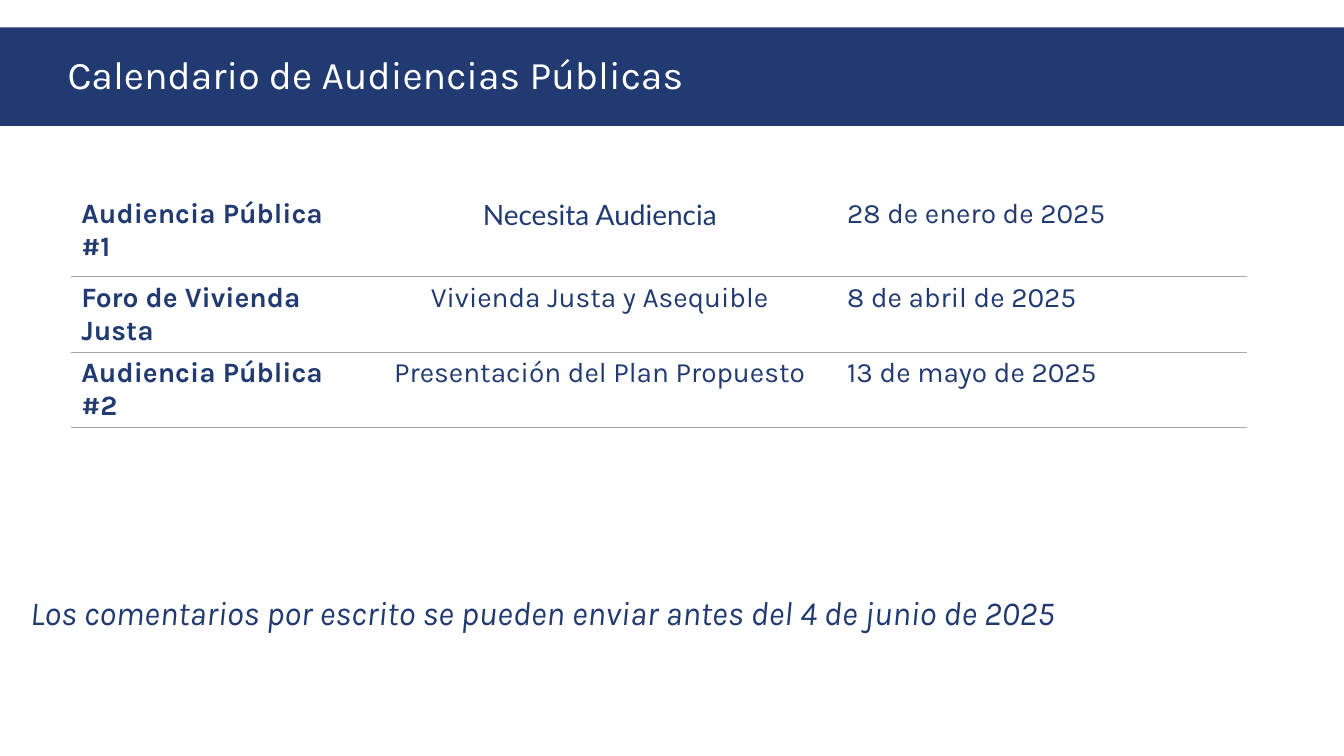
import pptx
import pptx.util
import pptx.dml.color
import pptx.enum.text
import pptx.oxml
import pptx.oxml.ns

Pt = pptx.util.Pt
ALIGN = pptx.enum.text.PP_ALIGN
ANCHOR = pptx.enum.text.MSO_ANCHOR

NAVY = pptx.dml.color.RGBColor(0x21, 0x3A, 0x71)
WHITE = pptx.dml.color.RGBColor(0xFF, 0xFF, 0xFF)
RULE_GRAY = pptx.dml.color.RGBColor(0xA6, 0xA6, 0xA6)

SLIDE_SIZE = (960, 540)
COLUMN_WIDTHS = (208, 339, 293)
ROW_HEIGHTS = (60, 50, 50)
HEARINGS = (
    ("Audiencia Pública #1", "Necesita Audiencia", "28 de enero de 2025"),
    ("Foro de Vivienda Justa", "Vivienda Justa y Asequible", "8 de abril de 2025"),
    ("Audiencia Pública #2", "Presentación del Plan Propuesto", "13 de mayo de 2025"),
)


def write_text(text_frame, text, color=NAVY, align=ALIGN.LEFT, **font_values):
    paragraph = text_frame.paragraphs[0]
    paragraph.alignment = align
    run = paragraph.add_run()
    run.text = text
    run.font.color.rgb = color
    for name, value in {"name": "Karla", **font_values}.items():
        setattr(run.font, name, value)
    return paragraph


def place(shape, box):
    for name, value in zip(("left", "top", "width", "height"), box):
        setattr(shape, name, Pt(value))


def set_cell_borders(cell, has_top_rule):
    """Horizontal gray rules only; the sides stay open."""
    ruled = {"lnL": False, "lnR": False, "lnT": has_top_rule, "lnB": True}
    properties = cell._tc.get_or_add_tcPr()
    for position, (tag, visible) in enumerate(ruled.items()):
        fill = (f'<a:solidFill><a:srgbClr val="{RULE_GRAY}"/></a:solidFill>'
                if visible else "<a:noFill/>")
        border = pptx.oxml.parse_xml(
            f'<a:{tag} {pptx.oxml.ns.nsdecls("a")} w="{Pt(1)}">{fill}</a:{tag}>')
        properties.insert(position, border)


def add_title_band(slide, box):
    title = slide.shapes.title
    place(title, box)
    title.fill.solid()
    title.fill.fore_color.rgb = NAVY
    title.text_frame.auto_size = pptx.enum.text.MSO_AUTO_SIZE.NONE
    title.text_frame.vertical_anchor = ANCHOR.MIDDLE
    paragraph = write_text(title.text_frame, "Calendario de Audiencias Públicas",
                           WHITE, size=Pt(28))
    paragraph.line_spacing = 0.9
    indents = paragraph._p.get_or_add_pPr()
    for name, value in {"marL": Pt(45), "indent": Pt(-4)}.items():
        indents.set(name, str(value))


def add_hearing_table(slide, box):
    left, top = box
    frame = slide.shapes.add_table(
        len(HEARINGS), len(COLUMN_WIDTHS), Pt(left), Pt(top),
        Pt(sum(COLUMN_WIDTHS)), Pt(sum(ROW_HEIGHTS)))
    table = frame.table
    table.first_row = table.horz_banding = False
    for column, width in zip(table.columns, COLUMN_WIDTHS):
        column.width = Pt(width)
    for row_index, hearing in enumerate(HEARINGS):
        table.rows[row_index].height = Pt(ROW_HEIGHTS[row_index])
        for column_index, text in enumerate(hearing):
            cell = table.cell(row_index, column_index)
            cell.fill.background()
            set_cell_borders(cell, has_top_rule=row_index > 0)
            write_text(
                cell.text_frame, text, size=Pt(20), bold=column_index == 0,
                name="Lato" if (row_index, column_index) == (0, 1) else "Karla",
                align=ALIGN.CENTER if column_index == 1 else ALIGN.LEFT)


def add_comment_note(slide, box):
    note = slide.shapes.add_textbox(*(Pt(value) for value in box))
    note.text_frame.word_wrap = True
    note.text_frame.vertical_anchor = ANCHOR.MIDDLE
    write_text(note.text_frame,
               "Los comentarios por escrito se pueden enviar antes del 4 de junio de 2025",
               size=Pt(24), italic=True)


def main():
    presentation = pptx.Presentation()
    presentation.slide_width, presentation.slide_height = map(Pt, SLIDE_SIZE)
    slide = presentation.slides.add_slide(presentation.slide_layouts[5])

    # Title band across the full width
    add_title_band(slide, (0, 19.5, SLIDE_SIZE[0], 70.5))
    # Hearing dates
    add_hearing_table(slide, (51, 137.5))
    # Deadline for written comments
    add_comment_note(slide, (14.5, 417, 931, 40))

    presentation.save("out.pptx")


if __name__ == "__main__":
    main()
